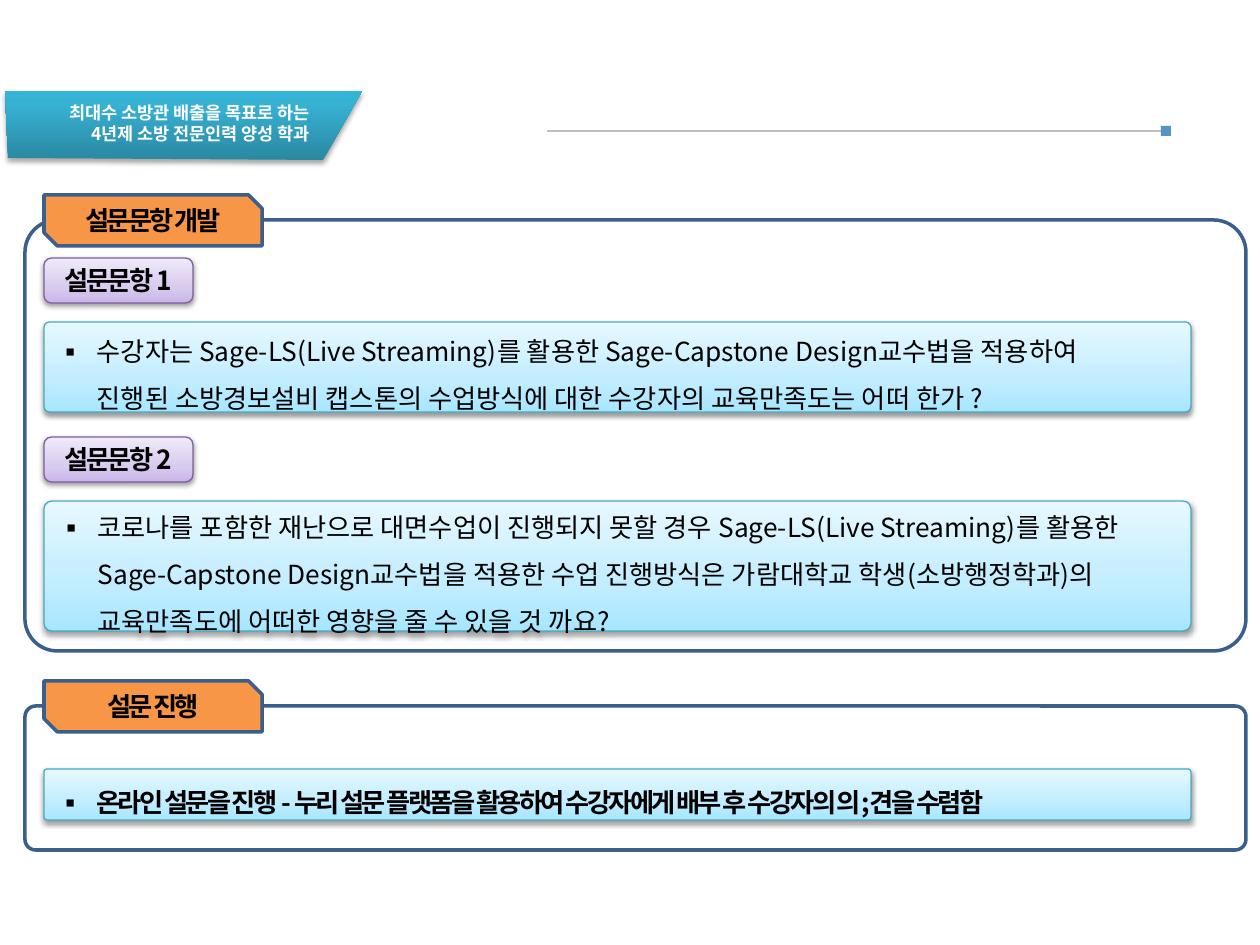
from dataclasses import dataclass

from lxml import etree
from pptx import Presentation
from pptx.dml.color import RGBColor
from pptx.enum.shapes import MSO_CONNECTOR, MSO_SHAPE
from pptx.enum.text import MSO_ANCHOR, PP_ALIGN
from pptx.oxml.ns import qn
from pptx.util import Pt

ROUND, SNIP, RECT = MSO_SHAPE.ROUNDED_RECTANGLE, MSO_SHAPE.SNIP_2_DIAG_RECTANGLE, MSO_SHAPE.RECTANGLE
STRAIGHT = MSO_CONNECTOR.STRAIGHT
MIDDLE = MSO_ANCHOR.MIDDLE
LEFT, CENTER, RIGHT = PP_ALIGN.LEFT, PP_ALIGN.CENTER, PP_ALIGN.RIGHT
FONT = "Noto Sans CJK KR"
SCALE = 914400 / 126
INDENT = 39
MARGIN = 44


@dataclass(frozen=True)
class Style:
    """Look of one family of boxes."""
    kind: int
    adj: tuple = ()
    fill: tuple = ()
    line: str = ""
    width: float = 0.75
    shadow: int = 0


@dataclass(frozen=True)
class Box:
    """One styled box with its text lines."""
    style: Style
    x: int
    y: int
    w: int
    h: int
    lines: tuple = ()
    bold: bool = True
    bullet: bool = False


PILL = Style(ROUND, (), ((0, "C9B5E8"), (35, "D8CBEE"), (100, "F0EAF9")), "7D60A0", shadow=38)
PANEL = Style(ROUND, (0.06,), ((0, "A7E6FF"), (35, "C1EDFF"), (100, "E7F8FF")), "46AAC5", shadow=38)
FRAME = Style(ROUND, (0.075,), (), "3A5F8C", 2)
TAB = Style(SNIP, (0, 0.262), ((0, "F79646"),), "3A5F8C", 2)
MARKER = Style(RECT, (), ((0, "5496BF"),))
RIBBON_FILL = ((0, "2A88A2"), (80, "37B1D2"), (100, "34B4D6"))
RIBBON_POINTS = ((8, 158), (5, 91), (362, 91), (323, 160))
RIBBON_LINES = ("최대수 소방관 배출을 목표로 하는", "4년제 소방 전문인력 양성 학과")

QUESTION_1 = ("수강자는 Sage-LS(Live Streaming)를 활용한 Sage-Capstone Design교수법을 적용하여",
              "진행된 소방경보설비 캡스톤의 수업방식에 대한 수강자의 교육만족도는 어떠 한가 ?")
QUESTION_2 = ("코로나를 포함한 재난으로 대면수업이 진행되지 못할 경우 Sage-LS(Live Streaming)를 활용한 "
              "Sage-Capstone Design교수법을 적용한 수업 진행방식은 가람대학교 학생(소방행정학과)의 "
              "교육만족도에 어떠한 영향을 줄 수 있을 것 까요?",)
SURVEY = ("온라인 설문을 진행 - 누리 설문 플랫폼을 활용하여 수강자에게 배부 후 수강자의 의;견을 수렴함",)

BOXES = (
    Box(MARKER, 1161, 126, 10, 10),
    Box(PILL, MARGIN, 258, 149, 45, ("설문문항 1",)),
    Box(PANEL, MARGIN, 322, 1147, 90, QUESTION_1, bold=False, bullet=True),
    Box(PILL, MARGIN, 437, 149, 45, ("설문문항 2",)),
    Box(PANEL, MARGIN, 501, 1147, 130, QUESTION_2, bold=False, bullet=True),
    Box(FRAME, 25, 220, 1221, 431),
    Box(TAB, MARGIN, 195, 218, 51, ("설문문항 개발",)),
    Box(FRAME, 25, 706, 1221, 144),
    Box(TAB, MARGIN, 681, 218, 51, ("설문 진행",)),
    Box(PANEL, MARGIN, 769, 1147, 51, SURVEY, bullet=True),
)


def px(n: int) -> int:
    """Turn pixels into EMU."""
    return round(n * SCALE)


def rgb(value: str) -> RGBColor:
    """Turn a hex string into a colour."""
    return RGBColor.from_string(value)


def sub(parent, tag: str, **attrs):
    """Append a drawing element with attributes."""
    return etree.SubElement(parent, qn(tag), {k: str(v) for k, v in attrs.items()})


def paint(s, stops: tuple) -> None:
    """Fill a shape with nothing, one colour or an upward gradient."""
    if not stops:
        s.fill.background()
    elif len(stops) == 1:
        s.fill.solid()
        s.fill.fore_color.rgb = rgb(stops[0][1])
    else:
        s.fill.gradient()
        s.fill.gradient_angle = 90
        stop_list = s._element.spPr.find(qn("a:gradFill")).find(qn("a:gsLst"))
        for old in list(stop_list):
            stop_list.remove(old)
        for pos, color in stops:
            sub(sub(stop_list, "a:gs", pos=pos * 1000), "a:srgbClr", val=color)


def outline(s, color: str, width: float) -> None:
    """Set or remove the outline of a shape."""
    if color:
        s.line.color.rgb = rgb(color)
        s.line.width = Pt(width)
    else:
        s.line.fill.background()


def cast_shadow(s, opacity: int, distance: float) -> None:
    """Drop the theme shadow and cast a downward one if asked."""
    s.shadow.inherit = False
    if opacity:
        effects = s._element.spPr.find(qn("a:effectLst"))
        shade = sub(effects, "a:outerShdw", blurRad=Pt(3.1), dist=Pt(distance),
                    dir=5400000, rotWithShape=0)
        sub(sub(shade, "a:srgbClr", val="000000"), "a:alpha", val=opacity * 1000)


def add_run(p, text: str, size: int, color: str, bold: bool, spacing: float = 0) -> None:
    """Add one run in the slide font."""
    r = p.add_run()
    r.text = text
    r.font.size, r.font.bold, r.font.name = Pt(size), bold, FONT
    r.font.color.rgb = rgb(color)
    props = r._r.get_or_add_rPr()
    sub(props, "a:ea", typeface=FONT)
    if spacing:
        props.set("spc", str(round(spacing * 100)))


def add_bullet(p) -> None:
    """Give a paragraph a hanging square bullet."""
    p.line_spacing = 1.5
    props = p._p.get_or_add_pPr()
    props.set("marL", str(px(INDENT)))
    props.set("indent", str(-px(INDENT)))
    sub(props, "a:buFont", typeface=FONT)
    sub(props, "a:buChar", char="▪")


def draw_box(slide, box: Box) -> None:
    """Draw a styled box and its text."""
    style = box.style
    s = slide.shapes.add_shape(style.kind, px(box.x), px(box.y), px(box.w), px(box.h))
    for i, value in enumerate(style.adj):
        s.adjustments[i] = value
    paint(s, style.fill)
    outline(s, style.line, style.width)
    cast_shadow(s, style.shadow, 1.6)
    if not box.lines:
        return
    tf = s.text_frame
    tf.word_wrap = True
    tf.vertical_anchor = MIDDLE
    p = tf.paragraphs[0]
    p.alignment = LEFT if box.bullet else CENTER
    if box.bullet:
        add_bullet(p)
    for i, line in enumerate(box.lines):
        if i:
            p.add_line_break()
        add_run(p, line, 15, "000000", box.bold, -1.5 if box.bold else 0)


def draw_rule(slide) -> None:
    """Draw the thin header rule."""
    s = slide.shapes.add_connector(STRAIGHT, px(547), px(131), px(1166), px(131))
    outline(s, "BFBFBF", 0.75)
    sub(s._element.spPr, "a:effectLst")


def draw_ribbon(slide) -> None:
    """Draw the slanted header ribbon with its motto."""
    start, *rest = [(px(x), px(y)) for x, y in RIBBON_POINTS]
    builder = slide.shapes.build_freeform(*start)
    builder.add_line_segments(rest, close=True)
    s = builder.convert_to_shape()
    paint(s, RIBBON_FILL)
    outline(s, "", 0)
    cast_shadow(s, 35, 1.8)
    tf = slide.shapes.add_textbox(px(-5), px(96), px(327), px(55)).text_frame
    tf.word_wrap = True
    for i, line in enumerate(RIBBON_LINES):
        p = tf.add_paragraph() if i else tf.paragraphs[0]
        p.alignment = RIGHT
        add_run(p, line, 10, "FFFFFF", True)


def main() -> None:
    """Build the survey slide and save it."""
    prs = Presentation()
    prs.slide_width, prs.slide_height = px(1260), px(945)
    slide = prs.slides.add_slide(prs.slide_layouts[6])
    draw_rule(slide)
    draw_ribbon(slide)
    for box in BOXES:
        draw_box(slide, box)
    prs.save("out.pptx")


if __name__ == "__main__":
    main()
